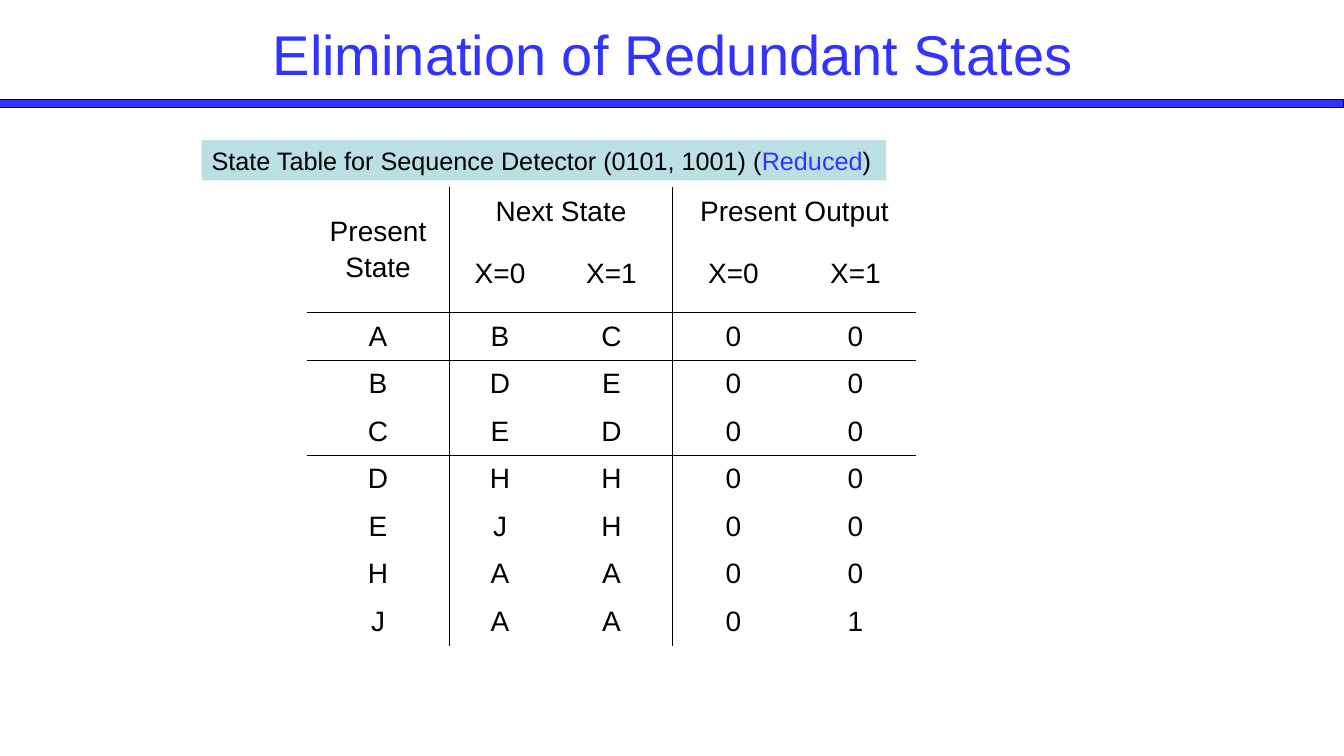
"""Build a slide showing the reduced state table of a sequence detector."""
from dataclasses import dataclass

from lxml import etree
from pptx import Presentation
from pptx.dml.color import RGBColor
from pptx.enum.shapes import MSO_SHAPE
from pptx.enum.text import MSO_ANCHOR, MSO_AUTO_SIZE, PP_ALIGN
from pptx.oxml.ns import qn
from pptx.util import Inches, Pt

RECTANGLE = MSO_SHAPE.RECTANGLE
MIDDLE, TOP = MSO_ANCHOR.MIDDLE, MSO_ANCHOR.TOP
CENTER, LEFT = PP_ALIGN.CENTER, PP_ALIGN.LEFT
FIT_SHAPE, NO_FIT = MSO_AUTO_SIZE.SHAPE_TO_FIT_TEXT, MSO_AUTO_SIZE.NONE
BLACK, BLUE, PALE_TEAL = "000000", "3333FF", "BBE0E3"
NO_TABLE_STYLE = "{2D5ABB26-0587-4C30-8999-92F81FD0307C}"

COLUMN_WIDTHS = (1.42, 1, 1.21, 1.21, 1.21)
ROW_HEIGHT = 4.25 / 9
STATE_ROWS = (
    ("Present\nState", "Next State", "", "Present Output", ""),
    ("", "X=0", "X=1", "X=0", "X=1"),
    *("ABC00", "BDE00", "CED00", "DHH00", "EJH00", "HAA00", "JAA01"),
)
MERGES = (((0, 0), (1, 0)), ((0, 1), (0, 2)), ((0, 3), (0, 4)))
RULES_BELOW_ROWS = {1, 2, 4}
RULES_AFTER_COLUMNS = {0, 2}


@dataclass(frozen=True)
class Run:
    text: str
    color: str = BLACK


@dataclass(frozen=True)
class Box:
    left: float
    top: float
    width: float
    height: float
    fill: str | None = None
    line: str | None = None
    runs: tuple[Run, ...] = ()
    size: float = 18
    alignment: PP_ALIGN = LEFT
    anchor: MSO_ANCHOR = TOP
    auto_size: MSO_AUTO_SIZE = NO_FIT


BOXES = (
    Box(0, 0.99, 13.33, 0.08, fill=BLUE, line=BLACK),
    Box(2, 1.39, 6.79, 0.4, fill=PALE_TEAL, auto_size=FIT_SHAPE, runs=(
        Run("State Table for Sequence Detector (0101, 1001) ("),
        Run("Reduced", BLUE),
        Run(")"),
    )),
    Box(1.92, 0.13, 9.5, 0.79, size=40, alignment=CENTER, anchor=MIDDLE,
        runs=(Run("Elimination of Redundant States", BLUE),)),
)


def color(value: str) -> RGBColor:
    """Turn a hex string into a colour."""
    return RGBColor.from_string(value)


def apply_format(target, values: dict) -> None:
    """Set every named attribute on the target."""
    for name, value in values.items():
        setattr(target, name, value)


def add_run(paragraph, run: Run, size: float) -> None:
    """Append a formatted run to a paragraph."""
    text_run = paragraph.add_run()
    text_run.text = run.text
    apply_format(text_run.font, {"name": "Arial", "size": Pt(size)})
    text_run.font.color.rgb = color(run.color)


def add_box(slide, box: Box) -> None:
    """Draw a rectangle or a plain text box."""
    place = [Inches(length) for length in (box.left, box.top, box.width, box.height)]
    if box.fill:
        shape = slide.shapes.add_shape(RECTANGLE, *place)
        shape.shadow.inherit = False
        shape.fill.solid()
        shape.fill.fore_color.rgb = color(box.fill)
        if box.line:
            shape.line.color.rgb = color(box.line)
            shape.line.width = Pt(0.75)
        else:
            shape.line.fill.background()
    else:
        shape = slide.shapes.add_textbox(*place)
    apply_format(shape.text_frame, {
        "word_wrap": True, "vertical_anchor": box.anchor, "auto_size": box.auto_size,
    })
    paragraph = shape.text_frame.paragraphs[0]
    paragraph.alignment = box.alignment
    for run in box.runs:
        add_run(paragraph, run, box.size)


def set_borders(cell, row: int, column: int) -> None:
    """Rule the sides of a cell and leave the other sides open."""
    last_row, last_column = row, column
    if cell.is_merge_origin:
        last_row += cell.span_height - 1
        last_column += cell.span_width - 1
    sides = {
        "a:lnL": column - 1 in RULES_AFTER_COLUMNS,
        "a:lnR": last_column in RULES_AFTER_COLUMNS,
        "a:lnT": row - 1 in RULES_BELOW_ROWS,
        "a:lnB": last_row in RULES_BELOW_ROWS,
    }
    properties = cell._tc.get_or_add_tcPr()
    for tag, ruled in sides.items():
        line = etree.SubElement(properties, qn(tag), w=str(Pt(1)))
        if ruled:
            fill = etree.SubElement(line, qn("a:solidFill"))
            etree.SubElement(fill, qn("a:srgbClr"), val=BLACK)
        else:
            etree.SubElement(line, qn("a:noFill"))


def fill_cell(cell, text: str) -> None:
    """Write centred text into a transparent cell."""
    cell.fill.background()
    cell.vertical_anchor = MIDDLE
    for index, line in enumerate(text.split("\n")):
        frame = cell.text_frame
        paragraph = frame.add_paragraph() if index else frame.paragraphs[0]
        apply_format(paragraph, {"alignment": CENTER, "space_before": Pt(3.5)})
        if line:
            add_run(paragraph, Run(line), 20)


def add_state_table(slide) -> None:
    """Draw the table of states and outputs."""
    table = slide.shapes.add_table(
        len(STATE_ROWS), len(COLUMN_WIDTHS), Inches(3.04), Inches(1.86),
        Inches(sum(COLUMN_WIDTHS)), Inches(ROW_HEIGHT * len(STATE_ROWS)),
    ).table
    apply_format(table, {"first_row": False, "horz_banding": False})
    table._tbl.tblPr.find(qn("a:tableStyleId")).text = NO_TABLE_STYLE
    for column, width in zip(table.columns, COLUMN_WIDTHS):
        column.width = Inches(width)
    for first, last in MERGES:
        table.cell(*first).merge(table.cell(*last))
    for row, texts in enumerate(STATE_ROWS):
        table.rows[row].height = Inches(ROW_HEIGHT)
        for column, text in enumerate(texts):
            cell = table.cell(row, column)
            set_borders(cell, row, column)
            fill_cell(cell, text)


def main() -> None:
    """Create and save the presentation."""
    presentation = Presentation()
    apply_format(presentation, {"slide_width": Inches(13.33), "slide_height": Inches(7.5)})
    slide = presentation.slides.add_slide(presentation.slide_layouts[6])
    rule, *text_boxes = BOXES
    add_box(slide, rule)
    add_state_table(slide)
    for box in text_boxes:
        add_box(slide, box)
    presentation.save("out.pptx")


if __name__ == "__main__":
    main()
